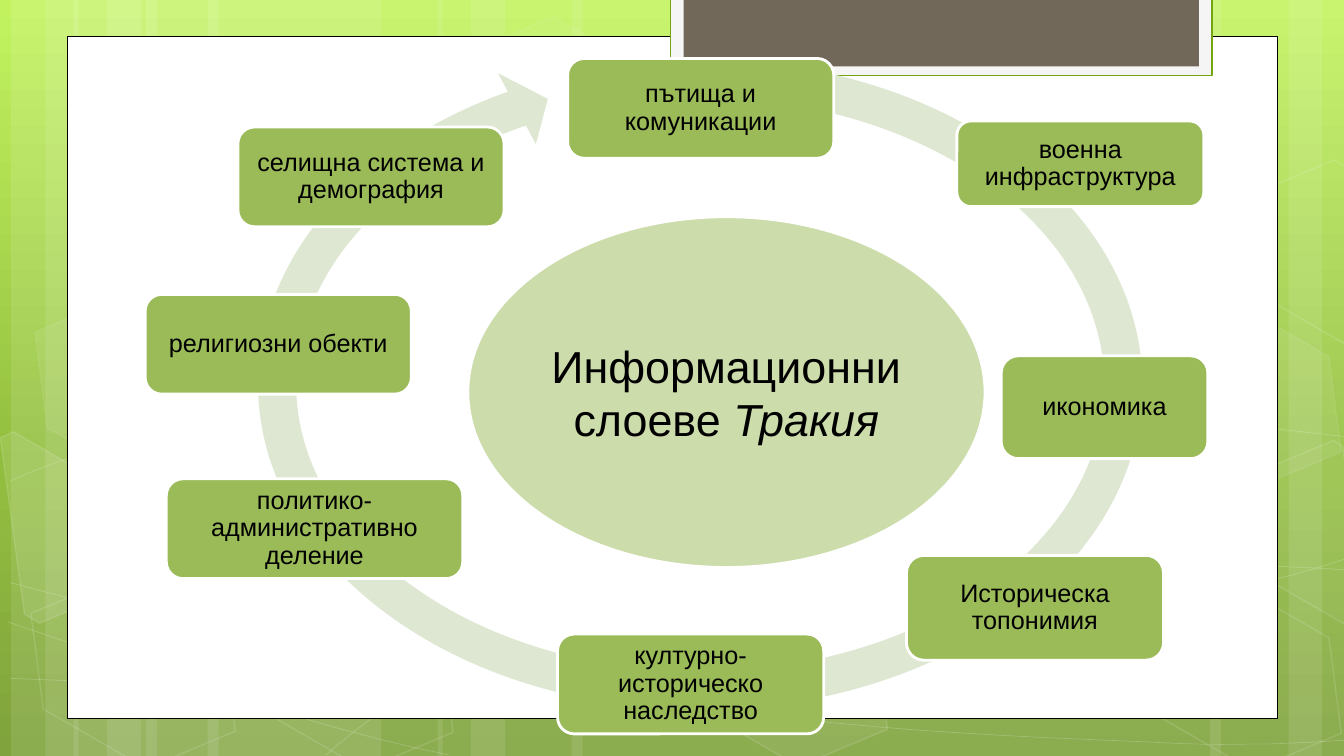
import copy
import math

import pptx
import pptx.dml.color
import pptx.enum.shapes
import pptx.enum.text
import pptx.oxml
import pptx.oxml.ns
import pptx.util

Inches = pptx.util.Inches
RGBColor = pptx.dml.color.RGBColor
KIND = pptx.enum.shapes.MSO_SHAPE
qn = pptx.oxml.ns.qn

WHITE = RGBColor(0xFF, 0xFF, 0xFF)
BLACK = RGBColor(0, 0, 0)
LEAF = RGBColor(0x9B, 0xBB, 0x59)
PALE = RGBColor(0xDE, 0xE7, 0xD1)
SMOKE = RGBColor(0xF5, 0xF5, 0xF5)
MOSS = RGBColor(0x74, 0xA5, 0x10)
BROWN = RGBColor(0x71, 0x68, 0x5A)
SKY = [(0, RGBColor(0x80, 0xA3, 0x3D)),
       (0.38, RGBColor(0x92, 0xBE, 0x3F)),
       (1, RGBColor(0xC2, 0xF3, 0x5F))]
TILT = 30

# left, width
BANDS = [(1.45, 2.33), (0.11, 0.67), (0.45, 1.11), (2.06, 2.33), (0.73, 0.67),
         (1.06, 1.11), (9.78, 2.33), (12.78, 0.67), (12, 1.11), (5.67, 4.11),
         (4.34, 0.67), (4.67, 1.11)]

# start point, then three points for each Bezier piece
WAVES = [
    [(0.1, 6.73), (0.82, 6.76), (1.54, 6.79), (2.54, 6.78), (3.54, 6.77),
     (4.77, 6.75), (6.1, 6.65), (7.44, 6.55), (9.33, 6.36), (10.56, 6.17),
     (11.78, 5.98), (13.03, 5.68), (13.43, 5.51)],
    [(0.1, 4.77), (0.48, 4.61), (0.86, 4.46), (1.62, 4.31), (2.38, 4.16),
     (3.45, 3.94), (4.63, 3.87), (5.82, 3.8), (7.25, 3.79), (8.72, 3.87),
     (10.19, 3.95), (12.63, 4.26), (13.43, 4.34)],
    [(0.08, 6.17), (1.69, 6.72), (3.3, 7.27), (4.46, 7.49)],
    [(0.1, 5.78), (0.51, 5.89), (0.93, 6), (1.71, 6.16), (2.48, 6.31),
     (3.64, 6.56), (4.75, 6.73), (5.87, 6.9), (7.27, 7.08), (8.37, 7.18),
     (9.48, 7.29), (10.67, 7.33), (11.37, 7.36), (12.07, 7.4), (12.26, 7.38),
     (12.6, 7.38), (12.94, 7.37), (13.19, 7.35), (13.43, 7.34)],
    [(3.23, 7.49), (3.47, 7.29), (3.7, 7.09), (4.03, 6.91), (4.35, 6.73),
     (4.8, 6.53), (5.17, 6.39), (5.54, 6.25), (5.77, 6.19), (6.26, 6.09),
     (6.75, 5.99), (7.65, 5.85), (8.11, 5.78), (8.58, 5.71), (8.65, 5.71),
     (9.07, 5.69), (9.48, 5.66), (10.13, 5.63), (10.59, 5.62), (11.05, 5.61),
     (11.82, 5.62), (11.82, 5.62), (12.11, 5.62), (12.41, 5.62), (12.7, 5.62),
     (12.95, 5.63), (13.17, 5.64), (13.29, 5.65), (13.41, 5.66), (13.37, 5.65),
     (13.41, 5.66)],
]

# corners of a whole cell around its middle, before the tilt
HEX = [(-0.59, -0.76), (-1.17, 0), (-0.59, 0.76),
       (0.59, 0.76), (1.17, 0), (0.59, -0.76)]
# middle, fill alpha, line alpha, corners on the slide if cut by its edge
CELLS = [
    ((5.62, 1.12), 4, 8, None),
    ((7.79, 6.65), 6, 12, None),
    ((0.48, 5.35), 10, 12, [(0, 4.34), (0.13, 4.28), (1.15, 4.87),
                            (1.27, 5.81), (0.39, 6.18), (0.24, 6.09)]),
    ((1.32, 6.67), 0, 12, None),
    ((1.36, 3.88), 7, 8, None),
    ((3.48, 6.68), 0, 12, None),
    ((12.29, 6.69), 0, 12, None),
    ((12.29, 3.9), 7, 8, None),
    ((13.13, 5.2), 4, 12, [(12.35, 4.74), (13.23, 4.37), (13.32, 4.43),
                           (13.57, 6.25), (13.49, 6.28), (12.47, 5.69)]),
    ((13.13, 2.41), 0, 12, [(12.35, 1.96), (13.23, 1.59), (13.34, 1.65),
                            (13.57, 3.46), (13.49, 3.5), (12.47, 2.91)]),
]

TOPICS = [
    ("пътища и комуникации", (5.63, 0.58, 2.64, 0.99)),
    ("военна инфраструктура", (9.49, 1.2, 2.45, 0.85)),
    ("икономика", (9.93, 3.53, 2.05, 1.02)),
    ("Историческа топонимия", (8.99, 5.51, 2.55, 1.04)),
    ("културно-историческо наследство", (5.53, 6.29, 2.64, 0.99)),
    ("политико-административно деление", (1.65, 4.75, 2.94, 0.99)),
    ("религиозни обекти", (1.44, 2.92, 2.64, 0.99)),
    ("селищна система и демография", (2.36, 1.26, 2.64, 0.99)),
]


class Deck:
    font = "Arial"

    def __init__(self):
        self.show = pptx.Presentation()
        self.show.slide_width = Inches(13.33)
        self.show.slide_height = Inches(7.5)
        self.slide = self.show.slides.add_slide(self.show.slide_layouts[6])

    def sky(self, stops):
        """Fill the background with a gradient rising from the bottom."""
        fill = self.slide.background.fill
        fill.gradient()
        fill.gradient_angle = 90
        items = self.slide.element.find(".//" + qn("a:gsLst"))
        items.insert(1, copy.deepcopy(items[0]))
        for stop, (place, color) in zip(fill.gradient_stops, stops):
            stop.position = place
            stop.color.rgb = color

    def fade(self, shape, tag, alpha):
        """Make the fill or the line (by tag) see-through."""
        node = shape.element.spPr.find(qn(tag)).find(".//" + qn("a:srgbClr"))
        part = pptx.oxml.parse_xml(
            '<a:alpha xmlns:a="http://schemas.openxmlformats.org/drawingml/2006/main"'
            f' val="{alpha * 1000}"/>')
        node.append(part)

    def paint(self, shape, fill=None, alpha=100, line=None, width=1, shade=100):
        shape.shadow.inherit = False
        if fill is None:
            shape.fill.background()
        else:
            shape.fill.solid()
            shape.fill.fore_color.rgb = fill
            if alpha < 100:
                self.fade(shape, "a:solidFill", alpha)
        if line is None:
            shape.line.fill.background()
        else:
            shape.line.color.rgb = line
            shape.line.width = pptx.util.Pt(width)
            if shade < 100:
                self.fade(shape, "a:ln", shade)
        return shape

    def shape(self, kind, box, **look):
        item = self.slide.shapes.add_shape(kind, *map(Inches, box))
        return self.paint(item, **look)

    def trace(self, points, close, **look):
        spots = [(Inches(x), Inches(y)) for x, y in points]
        pen = self.slide.shapes.build_freeform(*spots[0])
        pen.add_line_segments(spots[1:], close=close)
        return self.paint(pen.convert_to_shape(), **look)

    def wave(self, knots, steps=10):
        """Draw a chain of Bezier pieces as a thin, faint line."""
        points = [knots[0]]
        for i in range(0, len(knots) - 1, 3):
            for n in range(1, steps + 1):
                t = n / steps
                parts = ((1 - t) ** 3, 3 * t * (1 - t) ** 2,
                         3 * t * t * (1 - t), t ** 3)
                points.append([sum(p * k[axis] for p, k in zip(parts, knots[i:i + 4]))
                               for axis in (0, 1)])
        self.trace(points, False, line=WHITE, width=0.5, shade=20)

    def cell(self, mid, alpha, shade, cut):
        """Draw a tilted cell; cut corners are turned back before the tilt."""
        cos, sin = math.cos(math.radians(TILT)), math.sin(math.radians(TILT))
        mx, my = mid
        local = HEX
        if cut:
            local = [((x - mx) * cos + (y - my) * sin,
                      (y - my) * cos - (x - mx) * sin) for x, y in cut]
        item = self.trace([(mx + x, my + y) for x, y in local], True,
                          fill=WHITE if alpha else None, alpha=alpha,
                          line=WHITE, width=1, shade=shade)
        item.rotation = TILT

    def label(self, shape, lines, size, inset, space=1.0):
        """Put lines, each a list of (text, italic) runs, into a shape."""
        frame = shape.text_frame
        frame.word_wrap = True
        frame.vertical_anchor = pptx.enum.text.MSO_ANCHOR.MIDDLE
        frame.margin_left = frame.margin_right = Inches(inset)
        frame.margin_top = frame.margin_bottom = Inches(inset)
        for i, line in enumerate(lines):
            para = frame.add_paragraph() if i else frame.paragraphs[0]
            para.alignment = pptx.enum.text.PP_ALIGN.CENTER
            para.line_spacing = space
            for text, slant in line:
                run = para.add_run()
                run.text = text
                run.font.name = self.font
                run.font.size = pptx.util.Pt(size)
                run.font.italic = slant
                run.font.color.rgb = BLACK


def main():
    deck = Deck()
    deck.sky(SKY)
    for left, width in BANDS:
        deck.shape(KIND.RECTANGLE, (left, 0, width, 7.5), fill=WHITE, alpha=10)
    for knots in WAVES:
        deck.wave(knots)
    for cell in CELLS:
        deck.cell(*cell)

    deck.shape(KIND.RECTANGLE, (0.67, 0.36, 12, 6.77), fill=WHITE, line=BLACK, width=0.5)
    deck.shape(KIND.RECTANGLE, (6.65, -0.02, 5.37, 0.77), fill=SMOKE, line=MOSS, width=1.25)
    deck.shape(KIND.RECTANGLE, (6.78, -0.02, 5.11, 0.68), fill=BROWN)

    ring = deck.shape(KIND.CIRCULAR_ARROW, (2.35, 0.38, 9.19, 6.87), fill=PALE)
    for i, value in enumerate((0.055, 3.307, 141.845, 171.42, 0.058)):
        ring.adjustments[i] = value
    for text, box in TOPICS:
        card = deck.shape(KIND.ROUNDED_RECTANGLE, box, fill=LEAF, line=WHITE, width=2)
        deck.label(card, [[(text, False)]], 18, 0.07, 0.9)

    core = deck.shape(KIND.OVAL, (4.64, 2.15, 5.13, 3.48),
                      fill=LEAF, alpha=50, line=WHITE, width=2)
    deck.label(core, [[("Информационни", False)],
                      [("слоеве ", False), ("Тракия", True)]], 32, 0.04)
    deck.show.save("out.pptx")


if __name__ == "__main__":
    main()
